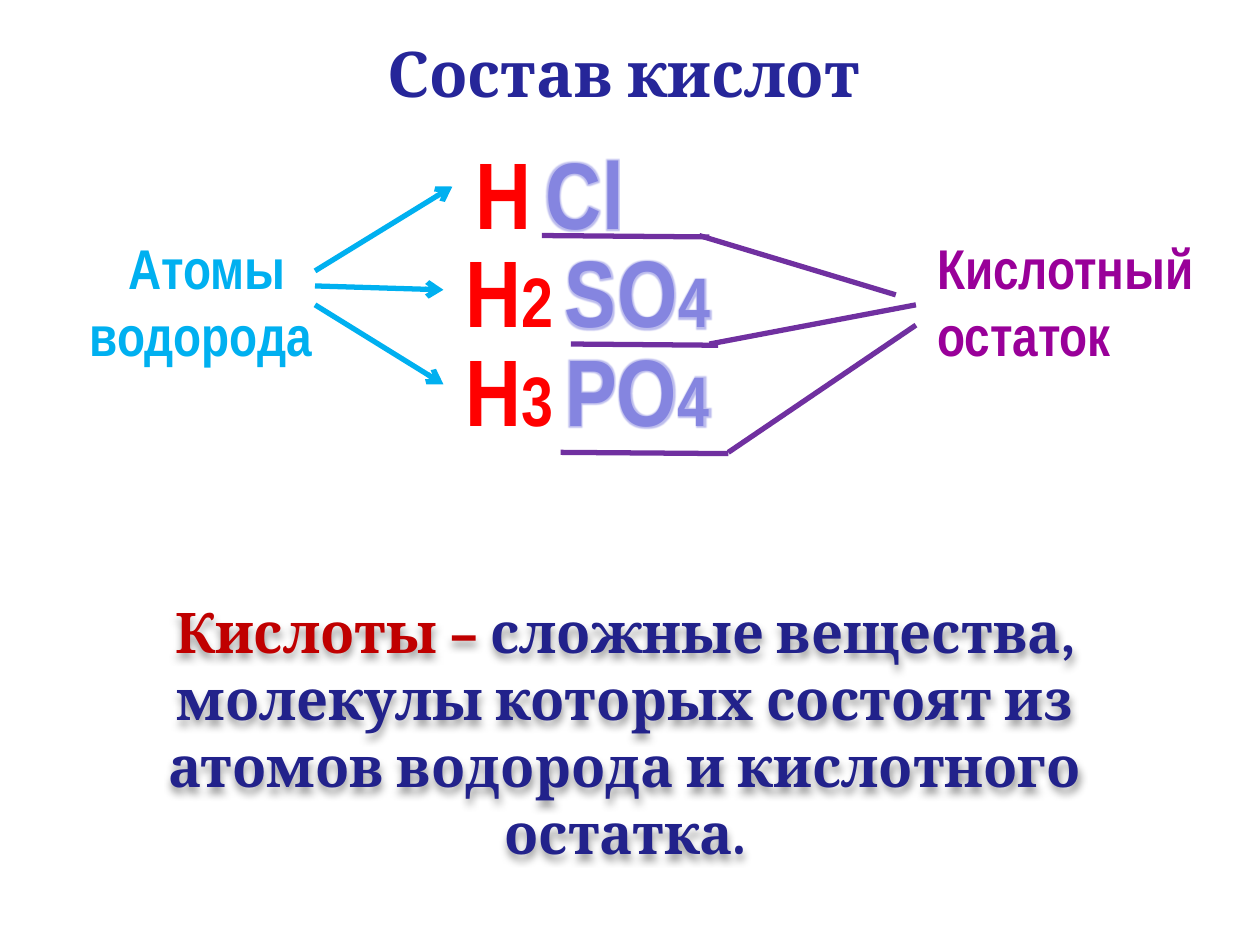
from lxml.etree import SubElement
from pptx import Presentation
from pptx.dml.color import RGBColor
from pptx.enum.shapes import MSO_CONNECTOR
from pptx.enum.text import MSO_ANCHOR, MSO_AUTO_SIZE, PP_ALIGN
from pptx.oxml import parse_xml
from pptx.oxml.ns import nsdecls, qn
from pptx.util import Pt

INDIGO = RGBColor(0x26, 0x26, 0x99)
NAVY = RGBColor(0x22, 0x22, 0x8B)
RED = RGBColor(0xFF, 0x00, 0x00)
DARK_RED = RGBColor(0xC0, 0x00, 0x00)
LILAC = RGBColor(0x85, 0x85, 0xE0)
DEEP_BLUE = RGBColor(0x1C, 0x1C, 0xB5)
SKY = RGBColor(0x00, 0xB0, 0xF0)
MAGENTA = RGBColor(0x99, 0x00, 0x99)
PURPLE = RGBColor(0x70, 0x30, 0xA0)

HEADING_FONT = "Cambria"
FORMULA_FONT = "Arial Narrow"
FORMULA_TOP, FORMULA_STEP, FORMULA_HEIGHT = 73.5, 56.2, 72.7
SYMBOL_SIZE, INDEX_SIZE = 54, 40

# Hydrogen part and acid residue: symbol, index, left, width
ACIDS = [
    (("Н", "", 264.2, 46.8), ("Сl", "", 303.8, 60.5)),
    (("Н", "2", 258.5, 65.5), ("SО", "4", 314.6, 99.4)),
    (("Н", "3", 258.5, 65.5), ("РО", "4", 314.6, 99.4)),
]
HYDROGEN_ARROWS = [
    (180, 154.8, 258.5, 106.6),
    (180, 163.4, 253.4, 165.6),
    (180, 174.2, 253.4, 219.6),
]
RESIDUE_UNDERLINES = [
    (309.6, 134.6, 405.4, 135.4),
    (326.2, 196.6, 410.4, 197.3),
    (320.4, 258.5, 416.2, 259.2),
]
RESIDUE_LEADERS = [
    (399.6, 134.6, 511.9, 168.5),
    (405.4, 196.6, 523.4, 174.2),
    (416.2, 258.5, 523.4, 185.8),
]

SHADOW = (f'<a:effectLst {nsdecls("a")}><a:outerShdw blurRad="50800" dist="38100" '
          'dir="5400000" algn="t" rotWithShape="0"><a:srgbClr val="000000">'
          '<a:alpha val="40000"/></a:srgbClr></a:outerShdw></a:effectLst>')
GLOW = (f'<a:effectLst {nsdecls("a")}><a:glow rad="38100"><a:srgbClr val="{LILAC}">'
        '<a:alpha val="55000"/></a:srgbClr></a:glow></a:effectLst>')


def outline_run(run, color, width):
    properties = run.font._element if hasattr(run.font, "_element") else run._r.get_or_add_rPr()
    properties.insert(0, parse_xml(
        f'<a:ln {nsdecls("a")} w="{Pt(width)}"><a:solidFill>'
        f'<a:srgbClr val="{color}"/></a:solidFill></a:ln>'))


def add_text(slide, paragraphs, box, *, size, font, color, align=PP_ALIGN.CENTER,
             wrap=True, grow=True, anchor=MSO_ANCHOR.TOP, outline=None,
             glow=False, shadow=False):
    """Each paragraph is a list of (text, overrides), overrides holding size or color."""
    area = slide.shapes.add_textbox(*(Pt(length) for length in box))
    frame = area.text_frame
    frame.word_wrap = wrap
    frame.auto_size = MSO_AUTO_SIZE.SHAPE_TO_FIT_TEXT if grow else MSO_AUTO_SIZE.NONE
    frame.vertical_anchor = anchor
    for number, pieces in enumerate(paragraphs):
        paragraph = frame.add_paragraph() if number else frame.paragraphs[0]
        paragraph.alignment = align
        for text, overrides in pieces:
            run = paragraph.add_run()
            run.text = text
            run.font.size = Pt(overrides.get("size", size))
            run.font.name = font
            run.font.bold = True
            run.font.color.rgb = overrides.get("color", color)
            if outline:
                outline_run(run, *outline)
            if glow:
                properties = run._r.get_or_add_rPr()
                properties.set("spc", "50")
                properties.find(qn("a:solidFill")).addnext(parse_xml(GLOW))
    if shadow:
        area._element.spPr.append(parse_xml(SHADOW))


def add_line(slide, ends, color, arrow=False):
    line = slide.shapes.add_connector(MSO_CONNECTOR.STRAIGHT, *(Pt(end) for end in ends))
    line.line.color.rgb = color
    line.line.width = Pt(3)
    if arrow:
        SubElement(line.line._get_or_add_ln(), qn("a:tailEnd"), type="arrow")
    SubElement(line._element.spPr, qn("a:effectLst"))


def main():
    deck = Presentation()
    deck.slide_width, deck.slide_height = Pt(720), Pt(540)
    slide = deck.slides.add_slide(deck.slide_layouts[6])

    add_text(slide, [[("Состав кислот", {})]], (11.5, 11.5, 689.8, 59.8),
             size=36, font=HEADING_FONT, color=INDIGO, grow=False,
             anchor=MSO_ANCHOR.MIDDLE)

    part_formats = (
        {"color": RED, "outline": (RED, 0.9)},
        {"color": LILAC, "outline": (DEEP_BLUE, 1), "glow": True},
    )
    for row, acid in enumerate(ACIDS):
        top = FORMULA_TOP + row * FORMULA_STEP
        for (symbol, index, left, width), part_format in zip(acid, part_formats):
            pieces = [(symbol, {})]
            if index:
                pieces.append((index, {"size": INDEX_SIZE}))
            add_text(slide, [pieces], (left, top, width, FORMULA_HEIGHT),
                     size=SYMBOL_SIZE, font=FORMULA_FONT, wrap=False, **part_format)

    add_text(slide, [[("Атомы", {})], [("водорода ", {})]], (39.6, 129.6, 157.7, 85),
             size=32, font=FORMULA_FONT, color=SKY)
    add_text(slide, [[("Кислотный остаток", {})]], (528.5, 129.6, 163.4, 85),
             size=32, font=FORMULA_FONT, color=MAGENTA, align=PP_ALIGN.LEFT)

    for ends in HYDROGEN_ARROWS:
        add_line(slide, ends, SKY, arrow=True)
    for ends in RESIDUE_UNDERLINES + RESIDUE_LEADERS:
        add_line(slide, ends, PURPLE)

    definition = [
        ("Кислоты – ", {"color": DARK_RED}),
        ("сложные вещества, молекулы которых состоят из атомов водорода "
         "и кислотного остатка.", {}),
    ]
    add_text(slide, [definition], (33.8, 337.7, 646.6, 123.8),
             size=32, font=HEADING_FONT, color=NAVY, shadow=True)

    deck.save("out.pptx")


if __name__ == "__main__":
    main()
